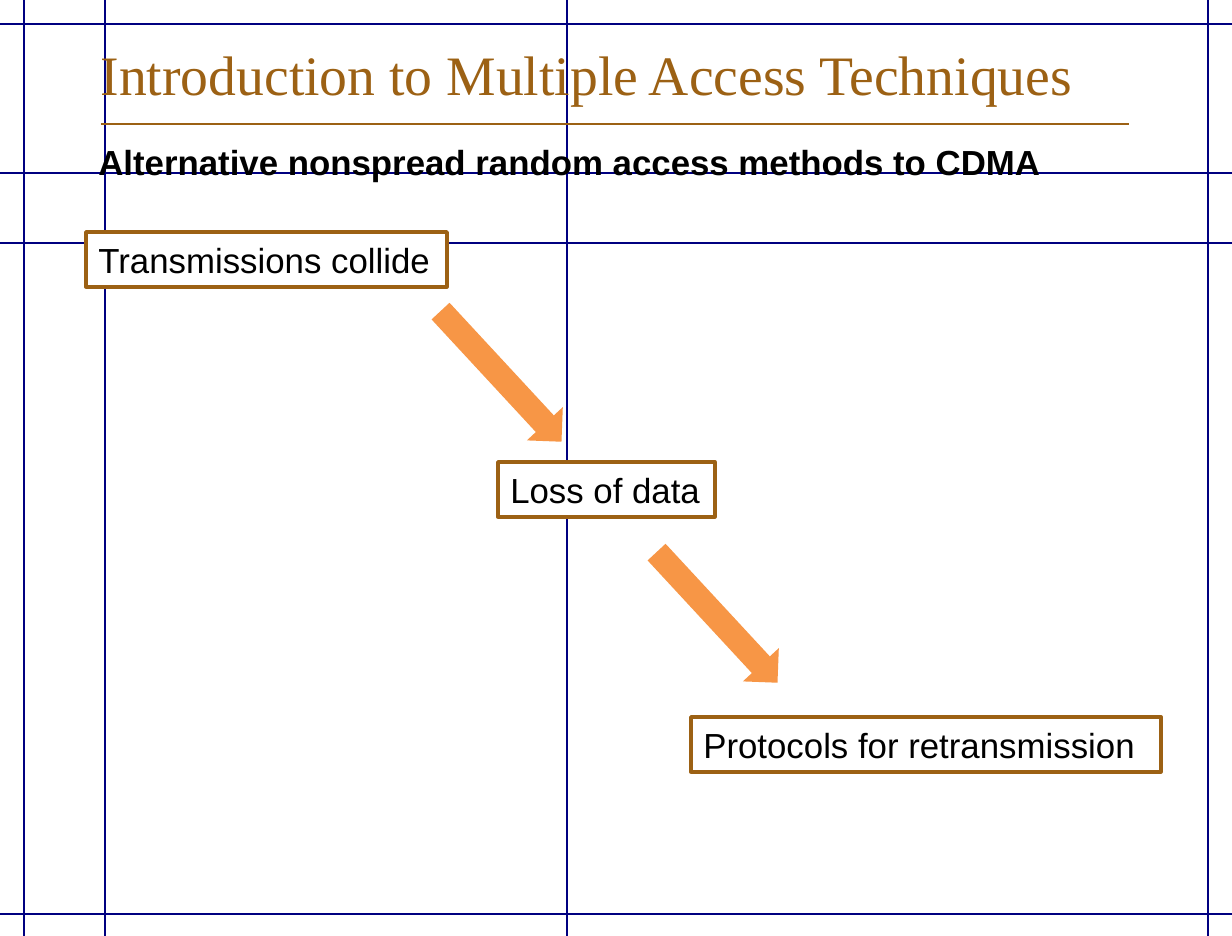
from dataclasses import dataclass

from pptx import Presentation
from pptx.dml.color import RGBColor
from pptx.enum.shapes import MSO_CONNECTOR, MSO_SHAPE
from pptx.enum.text import MSO_ANCHOR as Anchor, MSO_AUTO_SIZE as AutoSize, PP_ALIGN as Align
from pptx.oxml.ns import qn
from pptx.util import Emu, Pt
from lxml.etree import SubElement

EMU_PER_PX = 7303
WIDTH, HEIGHT = 1232, 936
TITLE_ONLY = 5


@dataclass(frozen=True)
class Theme:
    guide: str = "000080"
    brown: str = "9C6114"
    orange: str = "F79646"
    black: str = "000000"
    white: str = "FFFFFF"
    title_font: str = "Times New Roman"
    body_font: str = "Arial"
    title_size: int = 32
    body_size: int = 20
    thin: float = 0.75
    border: float = 2


@dataclass(frozen=True)
class Step:
    text: str
    left: int
    top: int
    width: int


@dataclass(frozen=True)
class Arrow:
    left: int
    top: int


THEME = Theme()

GUIDE_ROWS = (243, 24, 173, 914)
GUIDE_COLUMNS = (24, 1208, 567, 105)
OVERHANG_X, OVERHANG_Y = 16, 10

STEP_HEIGHT = 55
STEPS = (
    Step("Transmissions collide", 86, 232, 361),
    Step("Loss of data", 498, 462, 217),
    Step("Protocols for retransmission", 691, 717, 470),
)

ARROW_WIDTH, ARROW_HEIGHT, ARROW_ANGLE = 178, 49, 47.2
ARROWS = (Arrow(412, 352), Arrow(628, 593))


def px(*lengths: int) -> list[Emu]:
    return [Emu(length * EMU_PER_PX) for length in lengths]


def color(value: str) -> RGBColor:
    return RGBColor.from_string(value)


def write(shape, text: str, *, font: str = THEME.body_font, size: int = THEME.body_size,
          ink: str = THEME.black, bold: bool = False, anchor: Anchor = Anchor.TOP) -> None:
    frame = shape.text_frame
    frame.word_wrap = True
    frame.auto_size = AutoSize.NONE
    frame.vertical_anchor = anchor
    frame.margin_right = 0
    frame.text = text
    paragraph = frame.paragraphs[0]
    paragraph.alignment = Align.LEFT
    run_font = paragraph.runs[0].font
    run_font.name, run_font.size, run_font.bold = font, Pt(size), bold
    run_font.color.rgb = color(ink)


def draw_line(slide, start: tuple[int, int], end: tuple[int, int], ink: str) -> None:
    line = slide.shapes.add_connector(MSO_CONNECTOR.STRAIGHT, *px(*start, *end))
    line.line.color.rgb = color(ink)
    line.line.width = Pt(THEME.thin)
    SubElement(line._element.spPr, qn("a:effectLst"))


def draw_step(slide, step: Step) -> None:
    box = slide.shapes.add_shape(
        MSO_SHAPE.RECTANGLE, *px(step.left, step.top, step.width, STEP_HEIGHT))
    box.shadow.inherit = False
    box.fill.solid()
    box.fill.fore_color.rgb = color(THEME.white)
    box.line.color.rgb = color(THEME.brown)
    box.line.width = Pt(THEME.border)
    write(box, step.text, anchor=Anchor.MIDDLE)


def draw_arrow(slide, arrow: Arrow) -> None:
    shape = slide.shapes.add_shape(
        MSO_SHAPE.RIGHT_ARROW, *px(arrow.left, arrow.top, ARROW_WIDTH, ARROW_HEIGHT))
    shape.rotation = ARROW_ANGLE
    shape.shadow.inherit = False
    shape.fill.solid()
    shape.fill.fore_color.rgb = color(THEME.orange)
    shape.line.fill.background()


def main() -> None:
    presentation = Presentation()
    presentation.slide_width, presentation.slide_height = px(WIDTH, HEIGHT)
    slide = presentation.slides.add_slide(presentation.slide_layouts[TITLE_ONLY])
    title = slide.shapes.title

    # Guide lines and the rule under the title
    for y in GUIDE_ROWS:
        draw_line(slide, (-OVERHANG_X, y), (WIDTH + OVERHANG_X, y), THEME.guide)
    for x in GUIDE_COLUMNS:
        draw_line(slide, (x, -OVERHANG_Y), (x, HEIGHT + OVERHANG_Y), THEME.guide)
    draw_line(slide, (101, 124), (1129, 124), THEME.brown)

    # Title, raised above the guide lines
    slide.shapes._spTree.append(title._element)
    title.left, title.top, title.width, title.height = px(88, 39, 1042, 74)
    write(title, "Introduction to Multiple Access Techniques", font=THEME.title_font,
          size=THEME.title_size, ink=THEME.brown, anchor=Anchor.BOTTOM)

    # Subtitle
    subtitle = slide.shapes.add_textbox(*px(86, 135, 975, 96))
    write(subtitle, "Alternative nonspread random access methods to CDMA", bold=True)

    # Chain of steps
    for step in STEPS:
        draw_step(slide, step)
    for arrow in ARROWS:
        draw_arrow(slide, arrow)

    presentation.save("out.pptx")


if __name__ == "__main__":
    main()
